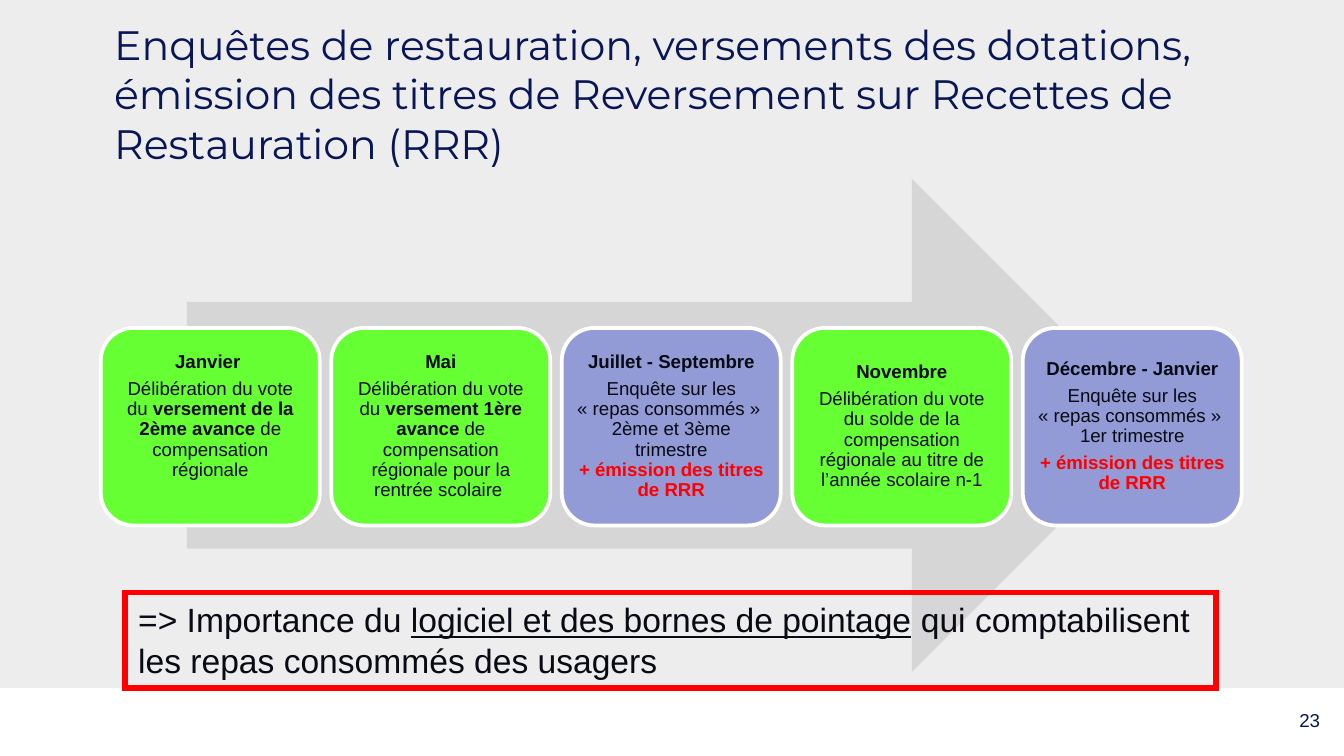
"""Build the yearly timeline slide on canteen surveys and allocation payments."""
from copy import deepcopy
from dataclasses import dataclass
from typing import NamedTuple

from lxml.etree import SubElement
from pptx import Presentation
from pptx.dml.color import RGBColor
from pptx.enum.shapes import MSO_SHAPE as Preset
from pptx.enum.text import MSO_ANCHOR as Anchor, MSO_AUTO_SIZE as AutoSize, PP_ALIGN as Align
from pptx.oxml.ns import qn
from pptx.shapes.autoshape import Shape
from pptx.slide import Slide
from pptx.text.text import TextFrame, _Paragraph as Paragraph
from pptx.util import Inches, Pt


@dataclass(frozen=True)
class Theme:
    backdrop: str = "EDEDED"
    band: str = "FFFFFF"
    arrow: str = "D6D6D6"
    navy: str = "081556"
    ink: str = "080A14"
    red: str = "FF0000"
    vote: str = "66FF33"
    survey: str = "929BD6"
    title_font: str = "Montserrat"
    body_font: str = "Arial"
    title_size: float = 22
    message_size: float = 18
    small_size: float = 10


class Box(NamedTuple):
    left: float
    top: float
    width: float
    height: float


class Span(NamedTuple):
    text: str
    bold: bool = False
    underline: bool = False
    color: str | None = None


@dataclass(frozen=True)
class Step:
    period: str
    fill: str
    details: tuple[tuple[Span, ...], ...]
    bottom_inset: float = 0.04


THEME = Theme()
FIRST_STEP = Box(0.75, 2.44, 1.63, 1.47)
STEPS_RIGHT = 9.24
NBSP = chr(160)
TITLE = (
    "Enquêtes de restauration, versements des dotations, émission des titres "
    "de Reversement sur Recettes de Restauration (RRR)"
)
MEALS_SURVEY = f"Enquête sur les «{NBSP}repas consommés{NBSP}» \n"
TITLES_ISSUED = Span("+ émission des titres de RRR", bold=True, color=THEME.red)
STEPS = (
    Step("Janvier ", THEME.vote, ((
        Span("Délibération du vote du"),
        Span(" versement de la 2ème avance ", bold=True),
        Span("de compensation régionale"),
    ),), bottom_inset=0.19),
    Step("Mai", THEME.vote, ((
        Span("Délibération du vote du"),
        Span(" versement 1ère avance ", bold=True),
        Span("de compensation régionale pour la rentrée scolaire "),
    ),)),
    Step("Juillet - Septembre", THEME.survey, ((
        Span(MEALS_SURVEY + "2ème et 3ème trimestre\n"),
        TITLES_ISSUED,
    ),)),
    Step("Novembre", THEME.vote, ((
        Span("Délibération du vote du solde de la compensation régionale "
             "au titre de l’année scolaire n-1"),
    ),)),
    Step("Décembre - Janvier", THEME.survey, (
        (Span(MEALS_SURVEY + "1er trimestre"),),
        (TITLES_ISSUED,),
    )),
)
MESSAGE = (
    Span("=> Importance du "),
    Span("logiciel et des bornes de pointage", underline=True),
    Span(" qui comptabilisent les repas consommés des usagers"),
)


def lengths(box: Box) -> list[int]:
    """Return the box as lengths."""
    return [Inches(value) for value in box]


def add_span(paragraph: Paragraph, span: Span, font: str, size: float, color: str) -> None:
    """Append a span, with line breaks in the same format as its text."""
    for index, line in enumerate(span.text.split("\n")):
        if index:
            paragraph._p.add_br().append(deepcopy(run._r.rPr))
        if not line:
            continue
        run = paragraph.add_run()
        run.text = line
        run.font.name, run.font.size = font, Pt(size)
        run.font.bold, run.font.underline = span.bold, span.underline
        run.font.color.rgb = RGBColor.from_string(span.color or color)


def write(
    frame: TextFrame,
    *paragraphs: tuple[Span, ...],
    font: str = THEME.body_font,
    size: float = THEME.small_size,
    color: str = THEME.ink,
    align: Align = Align.LEFT,
    anchor: Anchor = Anchor.MIDDLE,
    line_spacing: float = 1.0,
    space_after: float = 0,
) -> None:
    """Fill a text frame with formatted paragraphs."""
    frame.word_wrap, frame.auto_size = True, AutoSize.NONE
    frame.vertical_anchor = anchor
    for index, spans in enumerate(paragraphs):
        paragraph = frame.add_paragraph() if index else frame.paragraphs[0]
        paragraph.alignment = align
        paragraph.line_spacing = line_spacing
        paragraph.space_after = Pt(space_after)
        for span in spans:
            add_span(paragraph, span, font, size, color)


def add_preset(
    slide: Slide, preset: Preset, box: Box, fill: str | None = None,
    line: str | None = None, line_width: float = 0,
) -> Shape:
    """Draw a flat preset shape with mitred outline corners."""
    shape = slide.shapes.add_shape(preset, *lengths(box))
    shape.shadow.inherit = False
    if fill:
        shape.fill.solid()
        shape.fill.fore_color.rgb = RGBColor.from_string(fill)
    else:
        shape.fill.background()
    if line:
        shape.line.color.rgb = RGBColor.from_string(line)
        shape.line.width = Pt(line_width)
        SubElement(shape.line._get_or_add_ln(), qn("a:miter"), lim="800000")
    else:
        shape.line.fill.background()
    return shape


def add_step(slide: Slide, step: Step, box: Box) -> None:
    """Draw one period of the timeline."""
    card = add_preset(slide, Preset.ROUNDED_RECTANGLE, box, step.fill, THEME.band, 2)
    frame = card.text_frame
    frame.margin_left = frame.margin_right = frame.margin_top = Inches(0.04)
    frame.margin_bottom = Inches(step.bottom_inset)
    write(frame, (Span(step.period, bold=True),), *step.details,
          align=Align.CENTER, line_spacing=0.9, space_after=3.5)


def main() -> None:
    """Build and save the slide."""
    deck = Presentation()
    deck.slide_width = Inches(10)
    deck.slide_height = deck.slide_width * 9 // 16
    slide = deck.slides.add_slide(deck.slide_layouts[5])
    slide.background.fill.solid()
    slide.background.fill.fore_color.rgb = RGBColor.from_string(THEME.backdrop)

    title = slide.shapes.title
    title.left, title.top, title.width, title.height = lengths(Box(0.75, 0.23, 8.5, 0.93))
    write(title.text_frame, (Span(TITLE),), font=THEME.title_font,
          size=THEME.title_size, color=THEME.navy)

    add_preset(slide, Preset.RECTANGLE, Box(0, 5.12, 10, 0.51), THEME.band)
    add_preset(slide, Preset.RIGHT_ARROW, Box(1.39, 1.33, 7.23, 3.67), THEME.arrow)

    pitch = (STEPS_RIGHT - FIRST_STEP.left - FIRST_STEP.width) / (len(STEPS) - 1)
    for index, step in enumerate(STEPS):
        add_step(slide, step, FIRST_STEP._replace(left=FIRST_STEP.left + index * pitch))

    page_number = slide.shapes.add_textbox(*lengths(Box(8.69, 5.21, 1.23, 0.3)))
    write(page_number.text_frame, (Span("23"),), color=THEME.navy, align=Align.RIGHT)

    message = add_preset(slide, Preset.RECTANGLE, Box(0.93, 4.41, 8.12, 0.71),
                         line=THEME.red, line_width=3)
    write(message.text_frame, MESSAGE, size=THEME.message_size, anchor=Anchor.TOP)
    deck.save("out.pptx")


if __name__ == "__main__":
    main()
